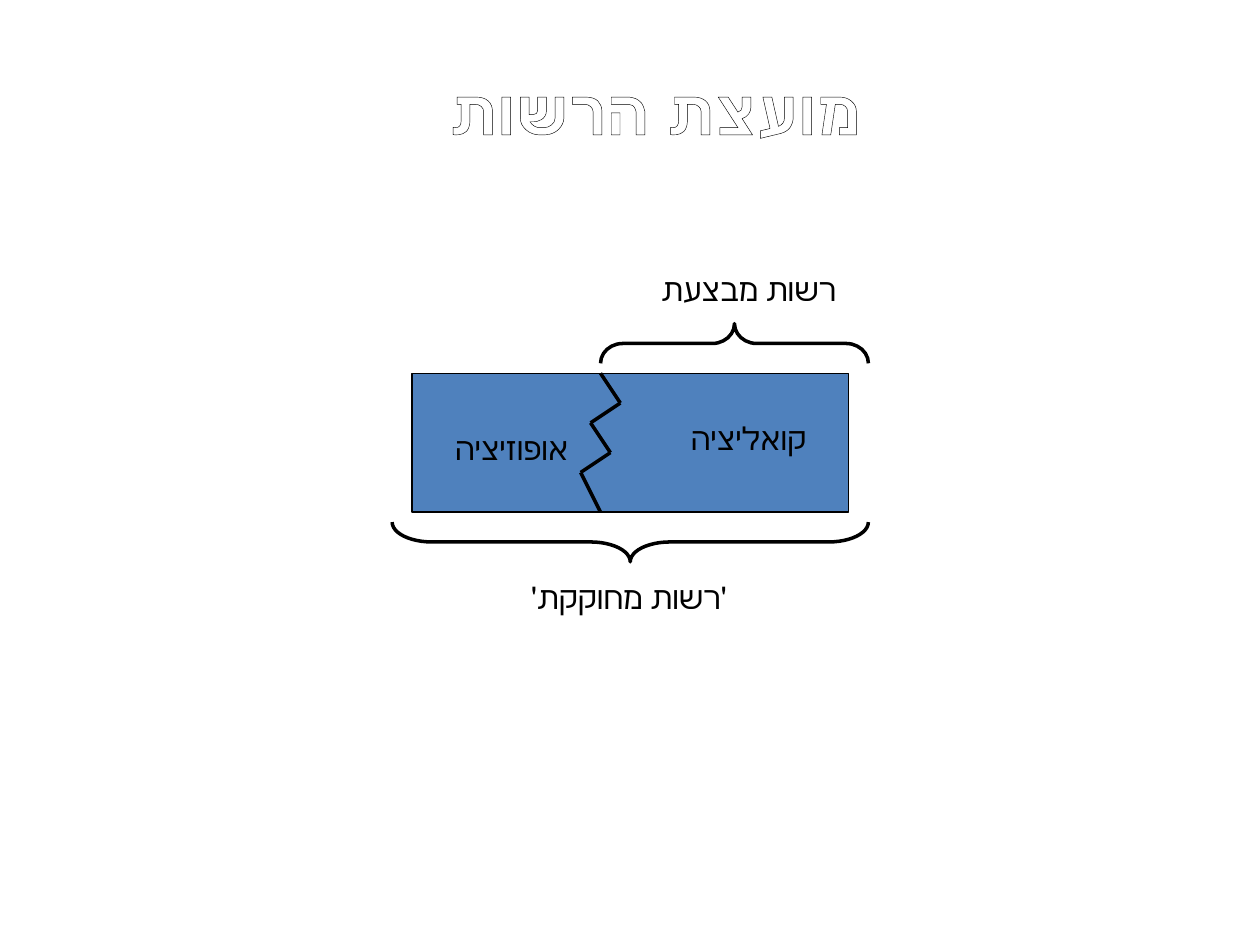
"""Build a slide on the two camps of a council and its two authorities."""
from itertools import pairwise
from lxml import etree
from pptx import Presentation, util as u
from pptx.dml.color import RGBColor
from pptx.enum import dml, shapes, text
from pptx.oxml import ns

THEME = {
    "ink": RGBColor(0, 0, 0),
    "council": RGBColor(0x4F, 0x81, 0xBD),
    "paper": RGBColor(255, 255, 255),
    "label": ("Calibri", u.Pt(18)),
    "title": ("Montserrat", u.Pt(36)),
    "outline": u.Pt(2.25),
    "thin": u.Pt(0.75),
    "thick": u.Pt(2),
}
WIDTH, HEIGHT = u.Inches(10), u.Inches(7.5)
CELL = WIDTH / 127
ORIGIN_X, ORIGIN_Y = 0.327 * WIDTH, 0.395 * HEIGHT

TITLE = ("מועצת הרשות", (-5, -31, 59, 15))
LABELS = [
    ("קואליציה", (26, 4, 15, 5)),
    ("אופוזיציה", (1, 5, 16, 5)),
    ("'רשות מחוקקת'", (-3, 20, 36, 5)),
    ("רשות מבצעת", (15, -11, 29, 5)),
]
COUNCIL = (0, 0, 44, 14)
SEAM = [(19, 0), (21, 3), (18, 5), (20, 8), (17, 10), (19, 14)]
BRACES = [((-2, 15, 48, 4), 270, 1.0), ((19, -5, 27, 4), 90, 0.56)]


def point(column, row):
    return round(ORIGIN_X + column * CELL), round(ORIGIN_Y + row * CELL)


def box(column, row, columns, rows):
    return *point(column, row), round(columns * CELL), round(rows * CELL)


def set_line(shape, width):
    shape.line.color.rgb = THEME["ink"]
    shape.line.width = width


def add_council(slide):
    shape = slide.shapes.add_shape(shapes.MSO_SHAPE.RECTANGLE, *box(*COUNCIL))
    shape.shadow.inherit = False
    shape.fill.solid()
    shape.fill.fore_color.rgb = THEME["council"]
    set_line(shape, THEME["thin"])


def add_seam(slide):
    for start, end in pairwise(SEAM):
        connector = slide.shapes.add_connector(
            shapes.MSO_CONNECTOR.STRAIGHT, *point(*start), *point(*end))
        set_line(connector, THEME["thick"])
        etree.SubElement(connector._element.spPr, ns.qn("a:effectLst"))


def add_brace(slide, area, rotation, curve):
    column, row, span, depth = area
    turned = (column + (span - depth) / 2, row - (span - depth) / 2, depth, span)
    shape = slide.shapes.add_shape(shapes.MSO_SHAPE.LEFT_BRACE, *box(*turned))
    shape.rotation = rotation
    shape.adjustments[0] = curve
    shape.shadow.inherit = False
    shape.fill.background()
    set_line(shape, THEME["thick"])


def add_text(slide, words, area, style, alignment):
    shape = slide.shapes.add_textbox(*box(*area))
    shape.text_frame.word_wrap = True
    paragraph = shape.text_frame.paragraphs[0]
    paragraph.text = words
    paragraph.alignment = alignment
    paragraph._p.get_or_add_pPr().set("rtl", "1")
    paragraph.font.name, paragraph.font.size = THEME[style]
    paragraph.font.color.rgb = THEME["ink"]
    return shape.text_frame


def add_title(slide):
    frame = add_text(slide, *TITLE, "title", text.PP_ALIGN.CENTER)
    frame.word_wrap = False
    font = frame.paragraphs[0].runs[0].font
    font.bold = True
    font.fill.patterned()
    font.fill.pattern = dml.MSO_PATTERN.WIDE_UPWARD_DIAGONAL
    font.fill.fore_color.rgb = THEME["council"]
    font.fill.back_color.rgb = THEME["paper"]
    outline = etree.Element(ns.qn("a:ln"), w=str(THEME["outline"]))
    solid = etree.SubElement(outline, ns.qn("a:solidFill"))
    etree.SubElement(solid, ns.qn("a:srgbClr"), val=str(THEME["ink"]))
    font._element.insert(0, outline)


def main():
    presentation = Presentation()
    presentation.slide_width, presentation.slide_height = WIDTH, HEIGHT
    slide = presentation.slides.add_slide(presentation.slide_layouts[6])
    add_council(slide)
    add_seam(slide)
    add_title(slide)
    for brace in BRACES:
        add_brace(slide, *brace)
    for words, area in LABELS:
        frame = add_text(slide, words, area, "label", text.PP_ALIGN.RIGHT)
        frame.auto_size = text.MSO_AUTO_SIZE.SHAPE_TO_FIT_TEXT
    presentation.save("out.pptx")


if __name__ == "__main__":
    main()
